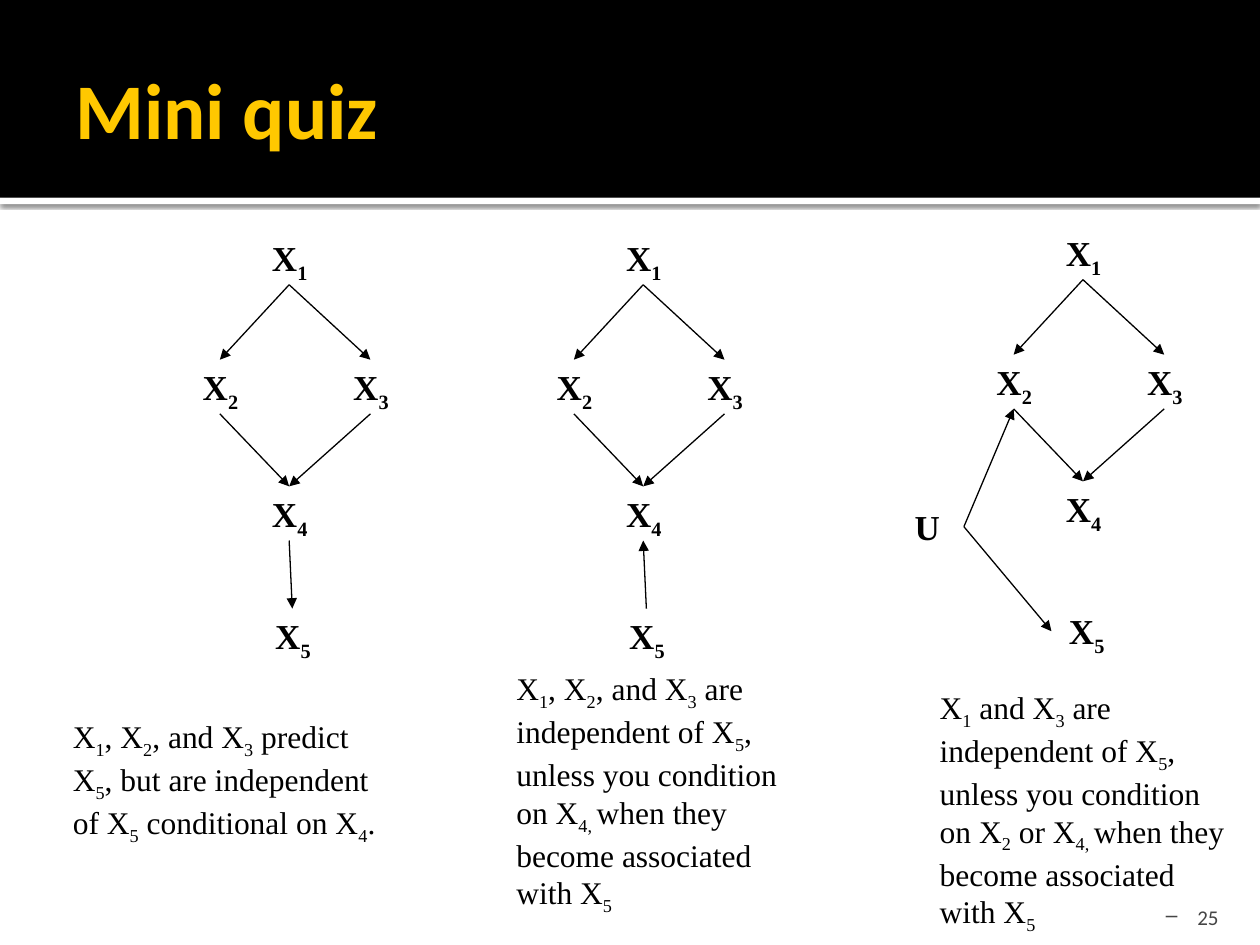
from pptx import Presentation
from pptx.dml.color import RGBColor
from pptx.enum.shapes import MSO_CONNECTOR, MSO_SHAPE
from pptx.enum.text import MSO_ANCHOR, MSO_AUTO_SIZE, PP_ALIGN
from pptx.oxml import parse_xml
from pptx.oxml.ns import nsdecls
from pptx.util import Inches, Pt

BLACK = RGBColor(0x00, 0x00, 0x00)
WHITE = RGBColor(0xFF, 0xFF, 0xFF)
GOLD = RGBColor(0xFF, 0xC8, 0x00)
GRAY = RGBColor(0x45, 0x45, 0x45)
SERIF = "Times New Roman"
SANS = "Calibri"
COLS, ROWS = 100, 75
NODE_W, NODE_H = 6, 4.3
NODES = {
    "X_1_": (0, 0),
    "X_2_": (-5.5, 10.25),
    "X_3_": (6.45, 10.25),
    "X_4_": (0, 20.3),
    "X_5_": (0.25, 30),
    "U": (-12.4, 21.7),
}
ANCHORS = {
    "top": (2.95, 0),
    "bottom": (2.95, NODE_H),
    "left": (0.2, 2.2),
    "right": (5.9, 2.2),
}
DIAMOND = [
    ("X_1_", "bottom", "X_2_", "top"),
    ("X_1_", "bottom", "X_3_", "top"),
    ("X_2_", "bottom", "X_4_", "top"),
    ("X_3_", "bottom", "X_4_", "top"),
]


def write(p, text, size=18, font=SERIF, color=BLACK, bold=False):
    for i, part in enumerate(text.split("_")):
        if not part:
            continue
        r = p.add_run()
        r.text = part
        r.font.size = Pt(size)
        r.font.name = font
        r.font.color.rgb = color
        r.font.bold = bold
        if i % 2:
            r.font._element.set("baseline", "-25000")


class Deck:
    def __init__(self):
        self.prs = Presentation()
        self.prs.slide_width = Inches(10)
        self.prs.slide_height = Inches(7.5)
        self.s = self.prs.slides.add_slide(self.prs.slide_layouts[6])

    def grid(self, x, y):
        return (int(self.prs.slide_width * x / COLS),
                int(self.prs.slide_height * y / ROWS))

    def band(self, y, h, color, shadow=False):
        sp = self.s.shapes.add_shape(
            MSO_SHAPE.RECTANGLE, *self.grid(0, y), *self.grid(COLS, h))
        sp.shadow.inherit = False
        sp.fill.solid()
        sp.fill.fore_color.rgb = color
        sp.line.fill.background()
        if shadow:
            sp._element.spPr.effectLst.append(parse_xml(
                f'<a:outerShdw {nsdecls("a")} blurRad="{Pt(2.5)}" dist="{Pt(0.8)}" '
                'dir="5400000" rotWithShape="0"><a:srgbClr val="000000">'
                '<a:alpha val="60000"/></a:srgbClr></a:outerShdw>'))

    def text(self, x, y, w, h, text, align=PP_ALIGN.LEFT, anchor=MSO_ANCHOR.TOP,
             grow=True, before=0, **style):
        sp = self.s.shapes.add_textbox(*self.grid(x, y), *self.grid(w, h))
        tf = sp.text_frame
        tf.word_wrap = True
        tf.vertical_anchor = anchor
        tf.auto_size = MSO_AUTO_SIZE.SHAPE_TO_FIT_TEXT if grow else MSO_AUTO_SIZE.NONE
        p = tf.paragraphs[0]
        p.alignment = align
        p.space_before = Pt(before)
        write(p, text, **style)
        return tf

    def title(self, text):
        tf = self.text(5, 1.7, 90, 13.7, text, anchor=MSO_ANCHOR.MIDDLE,
                       grow=False, size=45, font=SANS, color=GOLD, bold=True)
        tf.margin_right = Inches(0.05)

    def page_number(self, text):
        tf = self.text(89.7, 70.8, 8, 3, text, align=PP_ALIGN.RIGHT,
                       anchor=MSO_ANCHOR.BOTTOM, grow=False, size=12,
                       font=SANS, color=GRAY)
        tf.margin_bottom = 0
        pPr = tf.paragraphs[0]._p.get_or_add_pPr()
        pPr.set("marL", str(Inches(0.25)))
        pPr.set("indent", str(Inches(-0.25)))
        pPr.append(parse_xml(f'<a:buChar {nsdecls("a")} char="–"/>'))

    def arrow(self, start, end):
        c = self.s.shapes.add_connector(
            MSO_CONNECTOR.STRAIGHT, *self.grid(*start), *self.grid(*end))
        c.line.color.rgb = BLACK
        c.line.width = Pt(0.75)
        c.line._get_or_add_ln().append(
            parse_xml(f'<a:tailEnd {nsdecls("a")} type="triangle"/>'))
        c._element.spPr.append(parse_xml(f'<a:effectLst {nsdecls("a")}/>'))

    def diagram(self, x, y, edges, names):
        def point(name, side):
            return (x + NODES[name][0] + ANCHORS[side][0],
                    y + NODES[name][1] + ANCHORS[side][1])

        for name in names:
            dx, dy = NODES[name]
            self.text(x + dx, y + dy, NODE_W, NODE_H, name,
                      align=PP_ALIGN.CENTER, size=20, bold=True)
        for a, a_side, b, b_side in DIAMOND + edges:
            self.arrow(point(a, a_side), point(b, b_side))


def main():
    deck = Deck()
    deck.band(15.7, 0.5, WHITE, shadow=True)
    deck.band(0, 15.7, BLACK)
    deck.title("Mini quiz")
    deck.page_number("25")

    names = list(NODES)
    deck.diagram(20, 18.3, [("X_4_", "bottom", "X_5_", "top")], names[:5])
    deck.diagram(48.1, 18.3, [("X_5_", "top", "X_4_", "bottom")], names[:5])
    deck.diagram(83, 17.9, [("U", "right", "X_2_", "bottom"),
                            ("U", "right", "X_5_", "left")], names)

    answers = [
        (4.8, 56.4, 26.4, 10.1, "X_1_, X_2_, and X_3_ predict X_5_, but are "
         "independent of X_5_ conditional on X_4_."),
        (40, 52.6, 25.3, 19.2, "X_1_, X_2_, and X_3_ are independent of X_5_, "
         "unless you condition on X_4, _when they become associated with X_5_"),
        (73.6, 54.1, 25.3, 19.2, "X_1_ and X_3_ are independent of X_5_, unless "
         "you condition on X_2_ or X_4, _when they become associated with X_5_"),
    ]
    for answer in answers:
        deck.text(*answer, before=3.6)
    deck.prs.save("out.pptx")


if __name__ == "__main__":
    main()
